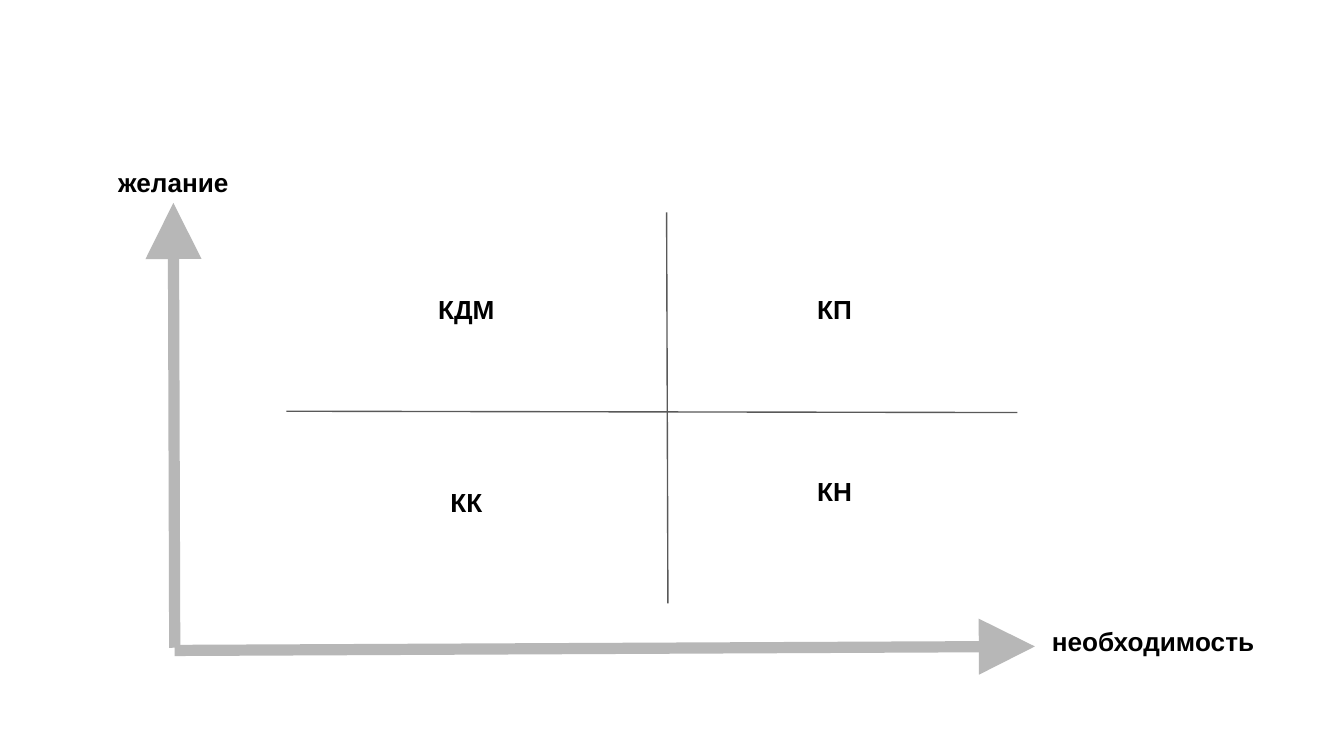
"""Build a slide with a desire / necessity matrix of four quadrants."""
from lxml.etree import SubElement
from pptx import Presentation
from pptx.dml.color import RGBColor
from pptx.enum.shapes import MSO_CONNECTOR
from pptx.enum.text import MSO_ANCHOR, PP_ALIGN
from pptx.oxml.ns import qn
from pptx.util import Inches, Pt

COLORS = {"axis": "B7B7B7", "divider": "595959", "text": "000000"}
FONT = "Arial"
SLIDE_WIDTH = 10
SLIDE_HEIGHT = SLIDE_WIDTH * 9 / 16
LABEL_HEIGHT = 0.54
LABEL_WIDTH = 1.12
INSET = 0.1

AXES = [((1.3, 4.82), (1.29, 1.51)), ((1.3, 4.84), (7.7, 4.81))]
DIVIDERS = [((4.96, 1.58), (4.97, 4.49)), ((7.57, 3.07), (2.13, 3.06))]

LEFT_COLUMN, RIGHT_COLUMN, TOP_ROW = 2.91, 5.65, 2.08
LABELS = [
    ("желание", 0.73, 1.14, LABEL_WIDTH),
    ("необходимость", 7.65, 4.55, 1.86),
    ("КК", LEFT_COLUMN, 3.52, LABEL_WIDTH),
    ("КДМ", LEFT_COLUMN, TOP_ROW, LABEL_WIDTH),
    ("КП", RIGHT_COLUMN, TOP_ROW, LABEL_WIDTH),
    ("КН", RIGHT_COLUMN, 3.44, LABEL_WIDTH),
]


def add_line(slide, start, end, color, width, arrow=False):
    line = slide.shapes.add_connector(
        MSO_CONNECTOR.STRAIGHT, *(Inches(value) for value in start + end)
    )
    line.line.color.rgb = RGBColor.from_string(COLORS[color])
    line.line.width = Pt(width)
    if arrow:
        SubElement(line.get_or_add_ln(), qn("a:tailEnd"),
                   type="triangle", w="lg", len="lg")
    SubElement(line.element.spPr, qn("a:effectLst"))


def add_label(slide, wording, left, top, width):
    label = slide.shapes.add_textbox(
        *(Inches(value) for value in (left, top, width, LABEL_HEIGHT))
    )
    frame = label.text_frame
    frame.text = wording
    frame.word_wrap = True
    frame.vertical_anchor = MSO_ANCHOR.TOP
    frame.margin_left = frame.margin_right = Inches(INSET)
    frame.margin_top = frame.margin_bottom = Inches(INSET)
    paragraph = frame.paragraphs[0]
    paragraph.alignment = PP_ALIGN.CENTER
    font = paragraph.runs[0].font
    font.name, font.size, font.bold = FONT, Pt(14), True
    font.color.rgb = RGBColor.from_string(COLORS["text"])


def main():
    deck = Presentation()
    deck.slide_width, deck.slide_height = Inches(SLIDE_WIDTH), Inches(SLIDE_HEIGHT)
    slide = deck.slides.add_slide(deck.slide_layouts[6])
    for start, end in AXES:
        add_line(slide, start, end, "axis", 6, arrow=True)
    for start, end in DIVIDERS:
        add_line(slide, start, end, "divider", 0.75)
    for label in LABELS:
        add_label(slide, *label)
    deck.save("out.pptx")


if __name__ == "__main__":
    main()
